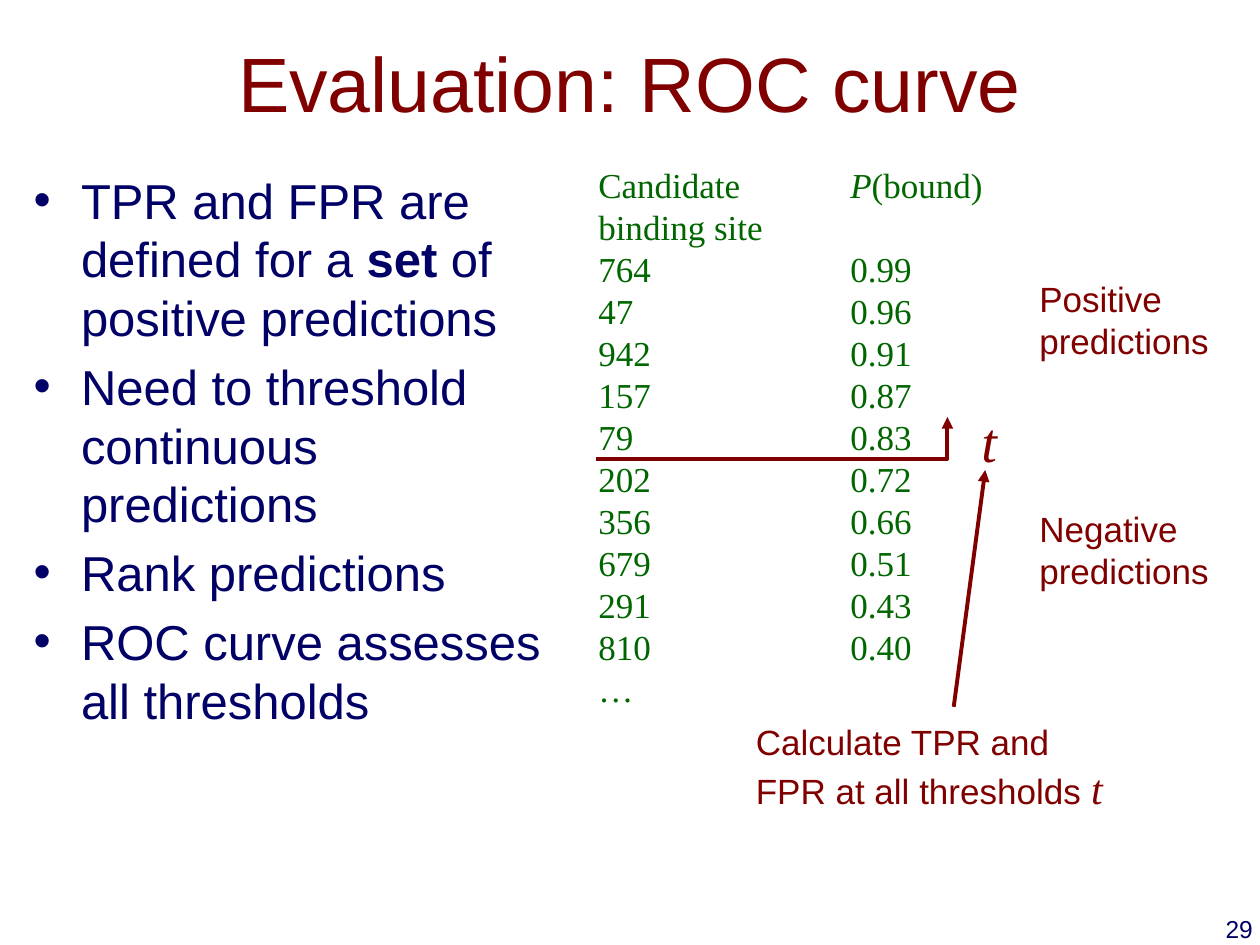
from dataclasses import dataclass, replace

from lxml.etree import SubElement
from pptx import Presentation
from pptx.dml.color import RGBColor
from pptx.enum.shapes import MSO_CONNECTOR as Connector
from pptx.enum.text import MSO_ANCHOR as Anchor, PP_ALIGN as Align
from pptx.oxml.ns import qn
from pptx.slide import Slide
from pptx.text.text import _Paragraph as Paragraph
from pptx.util import Pt

MAROON = RGBColor(0x80, 0x00, 0x00)
NAVY = RGBColor(0x00, 0x00, 0x66)
GREEN = RGBColor(0x00, 0x66, 0x00)
SANS = "Arial"
SERIF = "Times New Roman"
LINE_WIDTH = 2.25
BULLET_INDENT = 27
SCORE_TAB = 144


@dataclass(frozen=True)
class Style:
    size: float
    color: RGBColor
    font: str = SANS
    bold: bool = False
    italic: bool = False


@dataclass(frozen=True)
class Span:
    text: str
    style: Style


@dataclass(frozen=True)
class TextBlock:
    left: float
    top: float
    width: float
    height: float
    lines: list[list[Span]]
    align: Align = Align.LEFT
    anchor: Anchor = Anchor.TOP
    wrap: bool = True


TITLE = Style(44, MAROON)
BODY = Style(28, NAVY)
BODY_BOLD = replace(BODY, bold=True)
NUMBER = Style(14, NAVY)
LABEL = Style(20, MAROON)
SCORE = Style(20, GREEN, SERIF)
SCORE_ITALIC = replace(SCORE, italic=True)
THRESHOLD = Style(32, MAROON, SERIF, italic=True)
THRESHOLD_SMALL = replace(THRESHOLD, size=24)

SCORES = [
    ("764", "0.99"), ("47", "0.96"), ("942", "0.91"), ("157", "0.87"),
    ("79", "0.83"), ("202", "0.72"), ("356", "0.66"), ("679", "0.51"),
    ("291", "0.43"), ("810", "0.40"),
]

TITLE_BLOCK = TextBlock(54, 1.5, 612, 90, [[Span("Evaluation: ROC curve", TITLE)]],
                        Align.CENTER, Anchor.MIDDLE)
NUMBER_BLOCK = TextBlock(573, 519, 150, 36, [[Span("29", NUMBER)]], Align.RIGHT)
BULLET_BLOCK = TextBlock(12.2, 93.6, 306, 417, [
    [Span("TPR and FPR are defined for a ", BODY), Span("set", BODY_BOLD),
     Span(" of positive predictions", BODY)],
    [Span("Need to threshold continuous predictions", BODY)],
    [Span("Rank predictions", BODY)],
    [Span("ROC curve assesses all thresholds", BODY)],
])
SCORE_BLOCK = TextBlock(334.8, 90, 354, 322.6, [
    [Span("Candidate\t", SCORE), Span("P", SCORE_ITALIC), Span("(bound)", SCORE)],
    [Span("binding site", SCORE)],
    *[[Span(f"{site}\t{score}", SCORE)] for site, score in SCORES],
    [Span("…", SCORE)],
])
NOTES = [
    TextBlock(553.7, 229, 23.8, 46, [[Span("t", THRESHOLD)]], wrap=False),
    TextBlock(424.8, 408.2, 217.4, 60.5, [
        [Span("Calculate TPR and FPR at all thresholds ", LABEL),
         Span("t", THRESHOLD_SMALL)]]),
    TextBlock(586.8, 154.8, 133.2, 55.4, [[Span("Positive predictions", LABEL)]]),
    TextBlock(586.8, 286.6, 133.2, 55.4, [[Span("Negative predictions", LABEL)]]),
]


def add_text(page: Slide, block: TextBlock) -> list[Paragraph]:
    box = page.shapes.add_textbox(Pt(block.left), Pt(block.top),
                                  Pt(block.width), Pt(block.height))
    frame = box.text_frame
    frame.word_wrap = block.wrap
    frame.vertical_anchor = block.anchor
    frame.text = "\n".join("" for _ in block.lines)
    for paragraph, spans in zip(frame.paragraphs, block.lines):
        paragraph.alignment = block.align
        for span in spans:
            run = paragraph.add_run()
            run.text = span.text
            font = run.font
            font.name = span.style.font
            font.size = Pt(span.style.size)
            font.bold = span.style.bold
            font.italic = span.style.italic
            font.color.rgb = span.style.color
    return list(frame.paragraphs)


def add_bullet(paragraph: Paragraph) -> None:
    paragraph.space_before = Pt(BODY.size * 0.2)
    properties = paragraph._p.get_or_add_pPr()
    properties.set("marL", str(Pt(BULLET_INDENT)))
    properties.set("indent", str(-Pt(BULLET_INDENT)))
    SubElement(properties, qn("a:buFont"), typeface=SANS)
    SubElement(properties, qn("a:buChar"), char="•")


def add_tab_stop(paragraph: Paragraph, position: float) -> None:
    tabs = SubElement(paragraph._p.get_or_add_pPr(), qn("a:tabLst"))
    SubElement(tabs, qn("a:tab"), pos=str(Pt(position)), algn="l")


def style_arrow(shape) -> None:
    shape.line.color.rgb = MAROON
    shape.line.width = Pt(LINE_WIDTH)
    SubElement(shape.line._get_or_add_ln(), qn("a:tailEnd"), type="triangle")
    SubElement(shape._element.spPr, qn("a:effectLst"))


def add_threshold_line(page: Slide, left: float, base: float,
                       right: float, tip: float) -> None:
    builder = page.shapes.build_freeform(Pt(left), Pt(base))
    builder.add_line_segments([(Pt(right), Pt(base)), (Pt(right), Pt(tip))], close=False)
    shape = builder.convert_to_shape()
    shape.fill.background()
    style_arrow(shape)


def add_arrow(page: Slide, start: tuple[float, float], end: tuple[float, float]) -> None:
    style_arrow(page.shapes.add_connector(
        Connector.STRAIGHT, *(Pt(value) for value in start + end)))


def main() -> None:
    deck = Presentation()
    deck.slide_width, deck.slide_height = Pt(720), Pt(540)
    page = deck.slides.add_slide(deck.slide_layouts[6])

    add_text(page, TITLE_BLOCK)
    add_text(page, NUMBER_BLOCK)
    for paragraph in add_text(page, BULLET_BLOCK):
        add_bullet(paragraph)
    for paragraph in add_text(page, SCORE_BLOCK):
        add_tab_stop(paragraph, SCORE_TAB)
    add_threshold_line(page, left=340.6, base=262.1, right=541.4, tip=238.3)
    for note in NOTES:
        add_text(page, note)
    add_arrow(page, (545, 403.9), (563, 268.6))

    deck.save("out.pptx")


if __name__ == "__main__":
    main()
